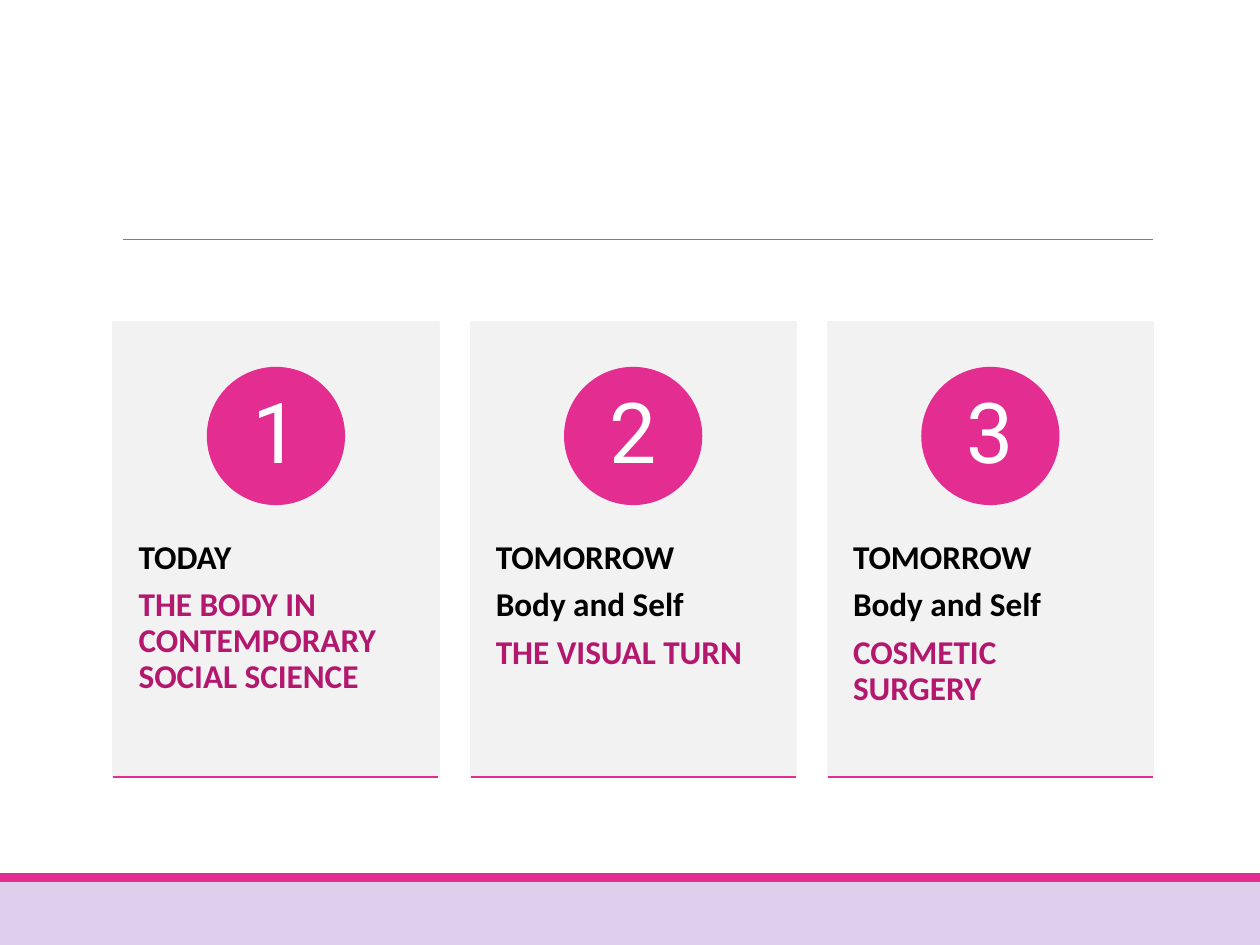
from lxml import etree
from pptx import Presentation
from pptx.dml.color import RGBColor
from pptx.enum import shapes, text
from pptx.oxml import ns
from pptx.util import Inches, Pt

PINK = RGBColor(0xE3, 0x2D, 0x91)
MAGENTA = RGBColor(0xB4, 0x18, 0x6E)
LILAC = RGBColor(0xE0, 0xCE, 0xED)
PALE_GRAY = RGBColor(0xF2, 0xF2, 0xF2)
GRAY = RGBColor(0x80, 0x80, 0x80)
BLACK = RGBColor(0, 0, 0)
WHITE = RGBColor(0xFF, 0xFF, 0xFF)

# The last line of each session is its topic
SESSIONS = [
    ["TODAY", "THE BODY IN CONTEMPORARY SOCIAL SCIENCE"],
    ["TOMORROW", "Body and Self", "THE VISUAL TURN"],
    ["TOMORROW", "Body and Self", "COSMETIC SURGERY"],
]

SLIDE_W, SLIDE_H = 10, 7.5
FOOTER_H, STRIPE_H = 0.5, 0.07
LEFT, RIGHT = 0.9, 9.15
CARD_TOP, CARD_W, CARD_H = 2.56, 2.58, 3.61
CARD_STEP = (RIGHT - LEFT - CARD_W) / (len(SESSIONS) - 1)
CIRCLE_TOP, CIRCLE = 2.92, 1.08
BODY_TOP, BODY_H = 3.93, 2.17
LINE_SPACING, PARAGRAPH_GAP = 0.9, 0.35

prs = Presentation()
prs.slide_width, prs.slide_height = Inches(SLIDE_W), Inches(SLIDE_H)
slide = prs.slides.add_slide(prs.slide_layouts[6])


def add_filled(kind, left, top, width, height, color, outlined=False):
    shape = slide.shapes.add_shape(
        kind, Inches(left), Inches(top), Inches(width), Inches(height))
    shape.shadow.inherit = False
    shape.fill.solid()
    shape.fill.fore_color.rgb = color
    if outlined:
        shape.line.color.rgb = color
        shape.line.width = Pt(1.25)
    else:
        shape.line.fill.background()
    return shape


def add_rule(left, right, y, color, weight):
    rule = slide.shapes.add_connector(
        shapes.MSO_CONNECTOR.STRAIGHT,
        Inches(left), Inches(y), Inches(right), Inches(y))
    rule.line.color.rgb = color
    rule.line.width = Pt(weight)
    etree.SubElement(rule._element.spPr, ns.qn("a:effectLst"))


def set_insets(frame, side, end):
    frame.word_wrap = True
    frame.margin_left = frame.margin_right = Inches(side)
    frame.margin_top = frame.margin_bottom = Inches(end)


def write(paragraph, words, font, size, color, bold=False):
    paragraph.line_spacing = LINE_SPACING
    paragraph.space_after = Pt(size * PARAGRAPH_GAP)
    run = paragraph.add_run()
    run.text = words
    run.font.name, run.font.size, run.font.bold = font, Pt(size), bold
    run.font.color.rgb = color


def add_card(number, lines):
    left = LEFT + (number - 1) * CARD_STEP
    add_filled(shapes.MSO_SHAPE.RECTANGLE, left, CARD_TOP, CARD_W, CARD_H,
               PALE_GRAY, outlined=True)

    body = slide.shapes.add_textbox(
        Inches(left), Inches(BODY_TOP), Inches(CARD_W), Inches(BODY_H)).text_frame
    set_insets(body, 0.2, 0.36)
    for i, line in enumerate(lines):
        paragraph = body.add_paragraph() if i else body.paragraphs[0]
        color = MAGENTA if i == len(lines) - 1 else BLACK
        write(paragraph, line, "Calibri", 19, color, bold=True)

    circle = add_filled(shapes.MSO_SHAPE.OVAL, left + (CARD_W - CIRCLE) / 2,
                        CIRCLE_TOP, CIRCLE, CIRCLE, PINK, outlined=True)
    badge = circle.text_frame
    set_insets(badge, 0.08, 0.01)
    badge.vertical_anchor = text.MSO_ANCHOR.MIDDLE
    badge.paragraphs[0].alignment = text.PP_ALIGN.CENTER
    write(badge.paragraphs[0], str(number), "Roboto", 48, WHITE)

    add_rule(left, left + CARD_W, CARD_TOP + CARD_H, PINK, 1.25)


footer_top = SLIDE_H - FOOTER_H
add_filled(shapes.MSO_SHAPE.RECTANGLE, 0, footer_top, SLIDE_W, FOOTER_H, LILAC)
add_filled(shapes.MSO_SHAPE.RECTANGLE, 0, footer_top - STRIPE_H, SLIDE_W, STRIPE_H, PINK)
add_rule(0.98, RIGHT, 1.9, GRAY, 0.5)
for number, lines in enumerate(SESSIONS, 1):
    add_card(number, lines)

prs.save("out.pptx")
